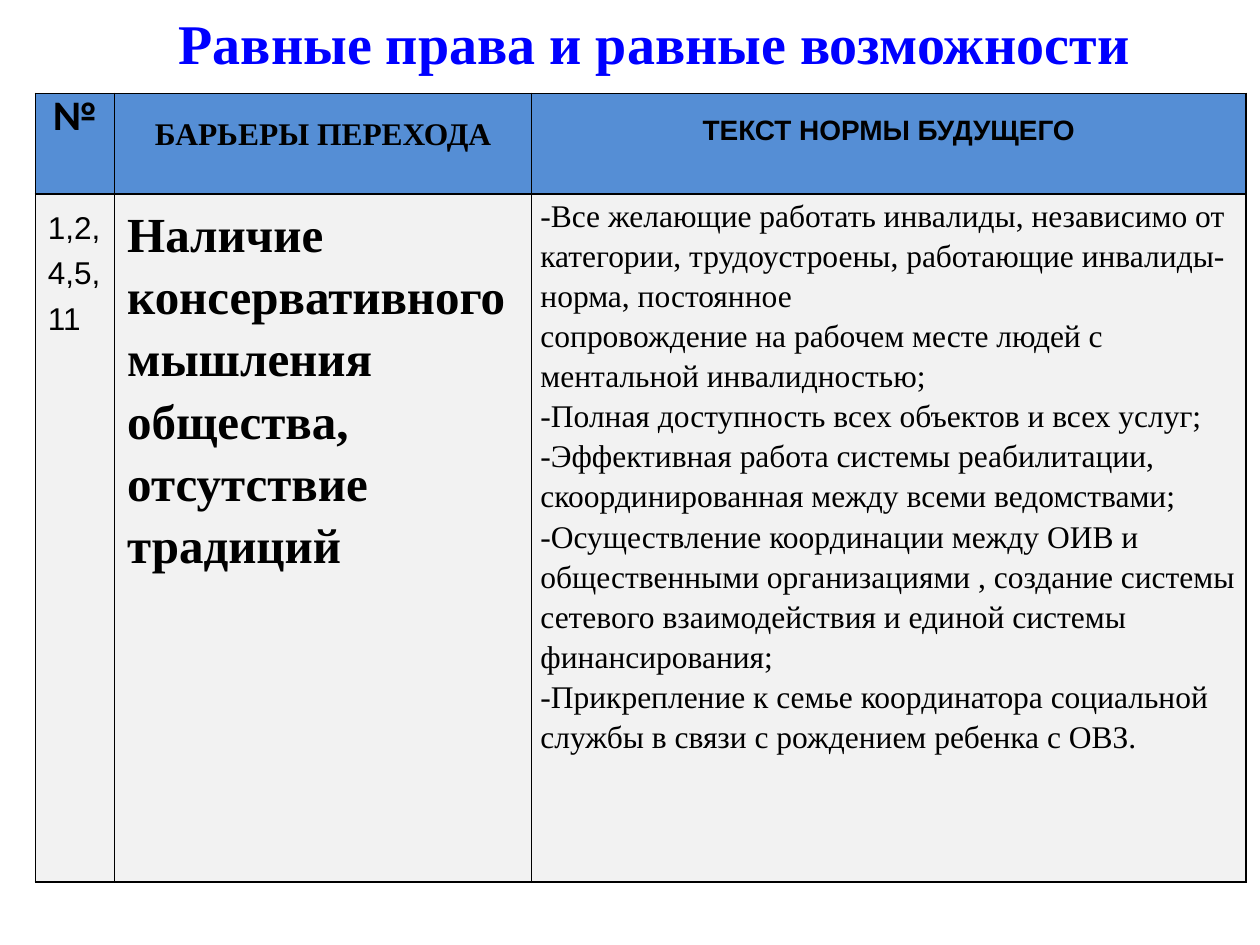
from pptx import Presentation
from pptx.dml.color import RGBColor
from pptx.enum.text import PP_ALIGN
from pptx.oxml import parse_xml
from pptx.oxml.ns import nsdecls
from pptx.util import Inches, Pt

COLORS = {
    "title": "0000FF",
    "text": "000000",
    "header": "558ED5",
    "body": "F2F2F2",
    "border": "000000",
}
SERIF = "Times New Roman"

TITLE = "Равные права и равные возможности"
NORMS = [
    "-Все желающие работать инвалиды, независимо от категории, трудоустроены, "
    "работающие инвалиды-норма, постоянное",
    "сопровождение на рабочем месте людей с ментальной инвалидностью;",
    "-Полная доступность всех объектов и всех услуг;",
    "-Эффективная работа системы реабилитации, скоординированная между всеми ведомствами;",
    "-Осуществление координации между ОИВ и общественными организациями , "
    "создание системы сетевого взаимодействия и единой системы финансирования;",
    "-Прикрепление к семье координатора социальной службы в связи с рождением ребенка с ОВЗ.",
]
HEADER = [
    (["№"], "Calibri", 24, True, Pt(24)),
    (["БАРЬЕРЫ ПЕРЕХОДА"], SERIF, 18, True, 1.5),
    (["ТЕКСТ НОРМЫ БУДУЩЕГО"], "Arial", 16, True, 1.5),
]
BODY = [
    (["1,2,4,5,11"], "Arial", 18, False, Pt(26)),
    (["Наличие консервативного мышления общества, отсутствие традиций"],
     SERIF, 28, True, 1.15),
    (NORMS, SERIF, 18, False, 1.15),
]


class SlideBuilder:
    def __init__(self, page, colors):
        self.page = page
        self.colors = colors

    def color(self, name):
        return RGBColor.from_string(self.colors[name])

    def fill_text(self, frame, lines, font, size, bold, spacing, align, color="text"):
        frame.word_wrap = True
        for index, line in enumerate(lines):
            para = frame.paragraphs[0] if index == 0 else frame.add_paragraph()
            para.text = line
            para.alignment = align
            para.line_spacing = spacing
            para.font.name = font
            para.font.size = Pt(size)
            para.font.bold = bold
            para.font.color.rgb = self.color(color)

    def title(self, text, left, top, width, height):
        box = self.page.shapes.add_textbox(
            Inches(left), Inches(top), Inches(width), Inches(height))
        self.fill_text(box.text_frame, [text], SERIF, 32, True, 1.0,
                       PP_ALIGN.CENTER, "title")

    def border(self, cell):
        properties = cell._tc.get_or_add_tcPr()
        for index, side in enumerate(("lnL", "lnR", "lnT", "lnB")):
            properties.insert(index, parse_xml(
                f'<a:{side} {nsdecls("a")} w="{Pt(1)}"><a:solidFill>'
                f'<a:srgbClr val="{self.colors["border"]}"/>'
                f'</a:solidFill></a:{side}>'))

    def table(self, left, top, widths, heights, rows):
        table = self.page.shapes.add_table(
            len(heights), len(widths), Inches(left), Inches(top),
            Inches(sum(widths)), Inches(sum(heights))).table
        for column, width in zip(table.columns, widths):
            column.width = Inches(width)
        for row, height, (fill, align, contents) in zip(table.rows, heights, rows):
            row.height = Inches(height)
            for cell, content in zip(row.cells, contents):
                cell.fill.solid()
                cell.fill.fore_color.rgb = self.color(fill)
                self.border(cell)
                self.fill_text(cell.text_frame, *content, align)
        return table


def main():
    deck = Presentation()
    deck.slide_width, deck.slide_height = Inches(10), Inches(7.5)
    page = deck.slides.add_slide(deck.slide_layouts[6])
    builder = SlideBuilder(page, COLORS)
    table = builder.table(
        0.28, 0.74, [0.63, 3.31, 5.67], [0.8, 5.46],
        [("header", PP_ALIGN.CENTER, HEADER), ("body", PP_ALIGN.LEFT, BODY)])
    norms = table.cell(1, 2)
    norms.margin_left = norms.margin_right = Inches(0.07)
    norms.margin_top = norms.margin_bottom = 0
    builder.title(TITLE, 1.18, 0.02, 8.03, 0.57)
    deck.save("out.pptx")


if __name__ == "__main__":
    main()
